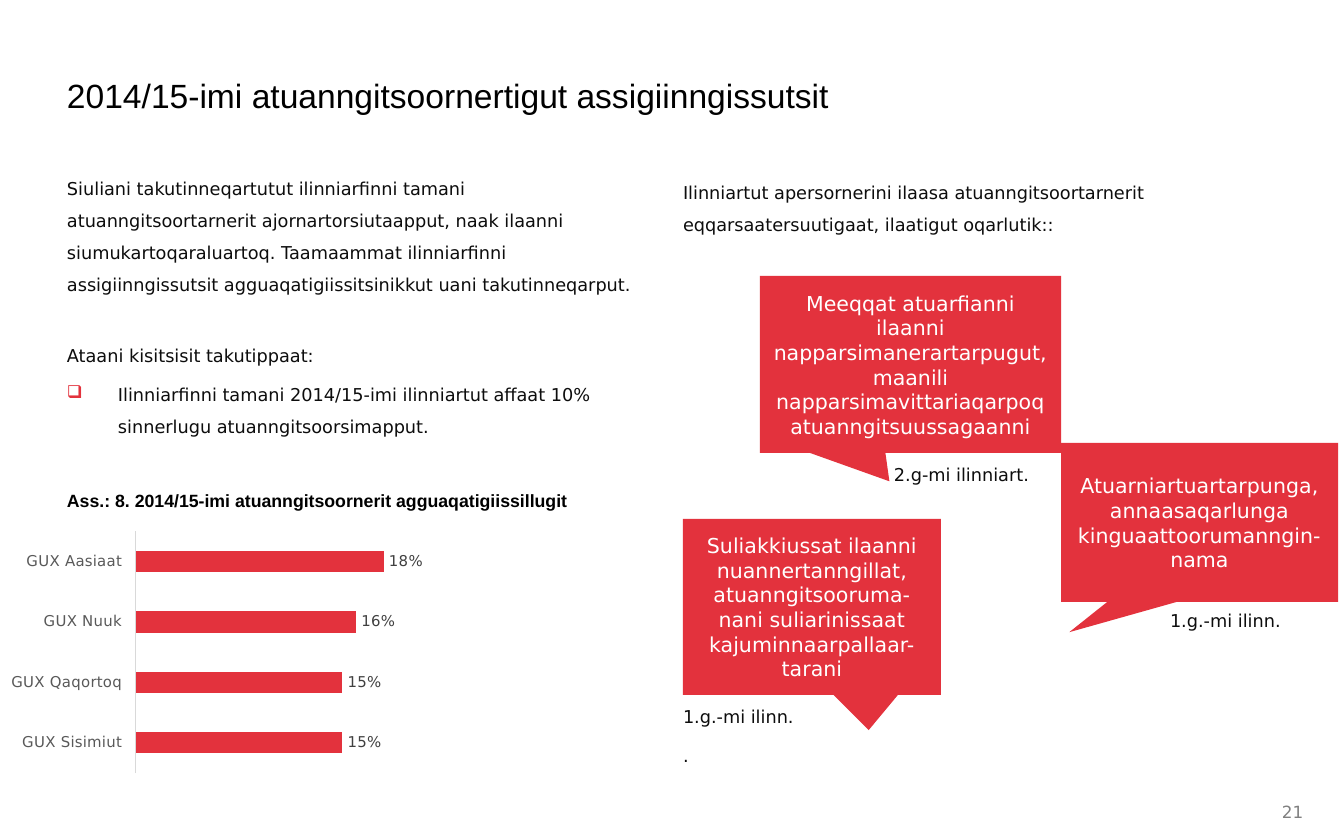
from lxml import etree
from pptx import Presentation
from pptx.chart.data import CategoryChartData
from pptx.dml.color import RGBColor
from pptx.enum.chart import XL_CHART_TYPE, XL_LABEL_POSITION, XL_TICK_LABEL_POSITION, XL_TICK_MARK
from pptx.enum.shapes import MSO_SHAPE
from pptx.enum.text import MSO_ANCHOR, PP_ALIGN
from pptx.oxml import parse_xml
from pptx.oxml.ns import nsdecls, qn
from pptx.util import Pt

BAR = XL_CHART_TYPE.BAR_CLUSTERED
OUT_END = XL_LABEL_POSITION.OUTSIDE_END
LOW = XL_TICK_LABEL_POSITION.LOW
NO_TICK = XL_TICK_MARK.NONE
CALLOUT = MSO_SHAPE.RECTANGULAR_CALLOUT
TOP, MIDDLE = MSO_ANCHOR.TOP, MSO_ANCHOR.MIDDLE
CENTER = PP_ALIGN.CENTER

SCALE = 914400 / 134.4
SANS, ARIAL = "DejaVu Sans", "Arial"
COLORS = {
    "red": "E3323D", "white": "FFFFFF", "black": "000000", "ink": "0D0D0D",
    "page": "808080", "axis": "D9D9D9", "cat": "595959", "label": "404040",
}


def px(n):
    return round(n * SCALE)


def rgb(name):
    return RGBColor.from_string(COLORS[name])


def style(font, size, color, face=SANS, bold=False):
    font.size, font.name, font.bold = Pt(size), face, bold
    font.color.rgb = rgb(color)


def add_text(slide, box, lines, size=9.5, color="ink", face=SANS, bold=False,
             space=1.5, gap=2, anchor=TOP):
    frame = slide.shapes.add_textbox(*map(px, box)).text_frame
    frame.word_wrap = True
    frame.vertical_anchor = anchor
    frame.margin_left = frame.margin_right = 0
    frame.margin_top = frame.margin_bottom = 0
    for i, line in enumerate(lines):
        para = frame.paragraphs[0] if i == 0 else frame.add_paragraph()
        para.text = line
        para.line_spacing = space
        para.space_before = Pt(gap if i else 0)
        para.space_after = Pt(gap)
        style(para.font, size, color, face, bold)
    return frame.paragraphs


def add_bullet(para, char, color, indent):
    props = para._p.get_or_add_pPr()
    props.set("marL", str(px(indent)))
    props.set("indent", str(-px(indent)))
    mark = etree.Element(qn("a:buClr"))
    etree.SubElement(mark, qn("a:srgbClr")).set("val", COLORS[color])
    sign = etree.Element(qn("a:buChar"))
    sign.set("char", char)
    # Bullet elements go ahead of the default run properties
    font = props.find(qn("a:defRPr"))
    font.addprevious(mark)
    font.addprevious(sign)


def add_quote(slide, box, tip, text):
    shape = slide.shapes.add_shape(CALLOUT, *map(px, box))
    shape.adjustments[0], shape.adjustments[1] = tip
    shape.shadow.inherit = False
    shape.fill.solid()
    shape.fill.fore_color.rgb = rgb("red")
    shape.line.fill.background()
    frame = shape.text_frame
    frame.word_wrap = True
    frame.vertical_anchor = MIDDLE
    para = frame.paragraphs[0]
    para.text = text
    para.alignment = CENTER
    style(para.font, 11, "white")


def add_bars(slide, box, rows, area):
    data = CategoryChartData(number_format="0%")
    data.categories = [name for name, _ in rows]
    data.add_series("Series 1", [value for _, value in rows])
    chart = slide.shapes.add_chart(BAR, *map(px, box), data).chart
    chart.has_legend = chart.has_title = False
    style(chart.font, 8, "black")

    # Axes
    cats, vals = chart.category_axis, chart.value_axis
    cats.major_tick_mark = cats.minor_tick_mark = NO_TICK
    cats.tick_label_position = LOW
    cats.format.line.color.rgb = rgb("axis")
    cats.format.line.width = Pt(0.75)
    style(cats.tick_labels.font, 8, "cat")
    vals.minimum_scale, vals.maximum_scale = 0, 0.22
    vals.has_major_gridlines = vals.visible = False

    # Bars and their labels
    plot = chart.plots[0]
    plot.gap_width = 182
    plot.vary_by_categories = False
    fill = plot.series[0].format.fill
    fill.solid()
    fill.fore_color.rgb = rgb("red")
    plot.has_data_labels = True
    labels = plot.data_labels
    labels.show_value = True
    labels.number_format, labels.number_format_is_linked = "0%", False
    labels.position = OUT_END
    style(labels.font, 8, "label")

    # Fixed inner plot area
    sides = "".join(f'<c:{k} val="{v}"/>' for k, v in zip("xywh", area))
    layout = parse_xml(
        f'<c:layout {nsdecls("c")}><c:manualLayout><c:layoutTarget val="inner"/>'
        f'<c:xMode val="edge"/><c:yMode val="edge"/>{sides}</c:manualLayout></c:layout>')
    inner = chart._chartSpace.chart.plotArea
    for old in inner.findall(qn("c:layout")):
        inner.remove(old)
    inner.insert(0, layout)


def main():
    deck = Presentation()
    deck.slide_width, deck.slide_height = px(1344), px(840)
    slide = deck.slides.add_slide(deck.slide_layouts[6])

    # Title and page number
    add_text(slide, (67, 75, 1210, 79),
             ["2014/15-imi atuanngitsoornertigut assigiinngissutsit"],
             18, "black", ARIAL, space=1, gap=0)
    add_text(slide, (1282, 804, 30, 12), ["21"], 9, "page", space=1.2, anchor=MIDDLE)

    # Left column
    intro = add_text(slide, (67, 167, 593, 290), [
        "Siuliani takutinneqartutut ilinniarfinni tamani atuanngitsoortarnerit "
        "ajornartorsiutaapput, naak ilaanni siumukartoqaraluartoq. Taamaammat "
        "ilinniarfinni assigiinngissutsit agguaqatigiissitsinikkut uani takutinneqarput.",
        "Ataani kisitsisit takutippaat:",
        "Ilinniarfinni tamani 2014/15-imi ilinniartut affaat 10% sinnerlugu "
        "atuanngitsoorsimapput."])
    intro[1].space_before = Pt(19)
    add_bullet(intro[2], "❑", "red", 51)

    # Chart with its caption
    add_text(slide, (67, 487, 597, 23),
             ["Ass.: 8. 2014/15-imi atuanngitsoornerit agguaqatigiissillugit"],
             color="black", face=ARIAL, bold=True, space=1.14)
    add_bars(slide, (-78, 509, 562, 281),
             [("GUX Sisimiut", 0.15), ("GUX Qaqortoq", 0.15),
              ("GUX Nuuk", 0.16), ("GUX Aasiaat", 0.18)],
             (0.38, 0.08, 0.54, 0.86))

    # Right column: quotes and who said them
    add_text(slide, (683, 171, 575, 69), [
        "Ilinniartut apersornerini ilaasa atuanngitsoortarnerit "
        "eqqarsaatersuutigaat, ilaatigut oqarlutik::"])
    add_quote(slide, (760, 276, 301, 177), (-0.07, 0.66),
              "Meeqqat atuarfianni ilaanni napparsimanerartarpugut, maanili "
              "napparsimavittariaqarpoq atuanngitsuussagaanni")
    add_quote(slide, (1061, 443, 277, 159), (-0.47, 0.69),
              "Atuarniartuartarpunga, annaasaqarlunga kinguaattoorumanngin-nama")
    add_quote(slide, (683, 519, 258, 176), (0.22, 0.7),
              "Suliakkiussat ilaanni nuannertanngillat, atuanngitsooruma-nani "
              "suliarinissaat kajuminnaarpallaar-tarani")
    add_text(slide, (894, 453, 160, 30), ["2.g-mi ilinniart."])
    add_text(slide, (1170, 599, 170, 38), ["1.g.-mi ilinn."])
    add_text(slide, (683, 695, 281, 80), ["1.g.-mi ilinn.", "."])

    deck.save("out.pptx")


if __name__ == "__main__":
    main()
